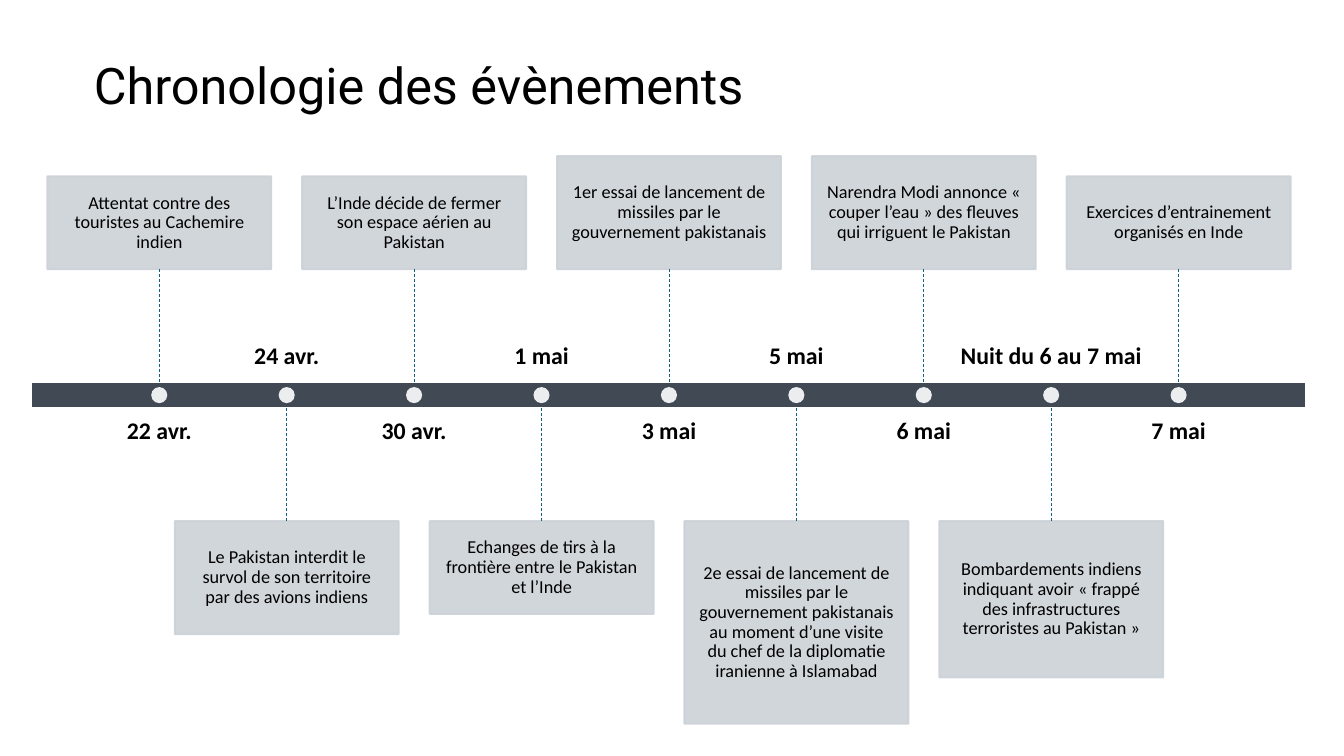
from dataclasses import dataclass

from lxml.etree import SubElement
from pptx import Presentation
from pptx.dml.color import RGBColor
from pptx.enum.dml import MSO_LINE
from pptx.enum.shapes import MSO_CONNECTOR, MSO_SHAPE
from pptx.enum.text import MSO_ANCHOR, MSO_AUTO_SIZE, PP_ALIGN
from pptx.oxml.ns import qn
from pptx.util import Inches, Pt


@dataclass(frozen=True)
class Theme:
    text: RGBColor = RGBColor.from_string("000000")
    white: RGBColor = RGBColor.from_string("FFFFFF")
    bar: RGBColor = RGBColor.from_string("414955")
    box: RGBColor = RGBColor.from_string("CCD2D8")
    link: RGBColor = RGBColor.from_string("156082")
    title_font: str = "Roboto"
    body_font: str = "Calibri"
    title_size: Pt = Pt(36)
    date_size: Pt = Pt(17)
    event_size: Pt = Pt(13)


theme = Theme()


def write(frame, text, font, size, align, anchor, margin, bold=False):
    """Fill a text frame with one formatted paragraph."""
    frame.word_wrap = True
    frame.auto_size = MSO_AUTO_SIZE.NONE
    frame.vertical_anchor = anchor
    frame.margin_left = frame.margin_right = Inches(margin)
    frame.margin_top = frame.margin_bottom = Inches(min(margin, 0.14))
    para = frame.paragraphs[0]
    para.alignment = align
    para.line_spacing = 0.9
    span = para.add_run()
    span.text = text
    span.font.name = font
    span.font.size = size
    span.font.bold = bold
    span.font.color.rgb = theme.text


def add_block(kind, left, top, width, height, color, outline=None, opacity=100):
    """Add a shadowless shape with a plain fill and an optional outline."""
    block = page.shapes.add_shape(
        kind, Inches(left), Inches(top), Inches(width), Inches(height))
    block.shadow.inherit = False
    block.fill.solid()
    block.fill.fore_color.rgb = color
    if outline is None:
        block.line.fill.background()
    else:
        block.line.color.rgb = outline
        block.line.width = Pt(1.5)
    if opacity < 100:
        for tint in block.element.spPr.iter(qn("a:srgbClr")):
            SubElement(tint, qn("a:alpha"), val=str(opacity * 1000))
    return block


# Date, event and box height; events alternate above and below the bar
events = [
    ("22 avr.", "Attentat contre des touristes au Cachemire indien", 0.92),
    ("24 avr.", "Le Pakistan interdit le survol de son territoire par des avions indiens", 1.12),
    ("30 avr.", "L’Inde décide de fermer son espace aérien au Pakistan", 0.92),
    ("1 mai", "Echanges de tirs à la frontière entre le Pakistan et l’Inde", 0.92),
    ("3 mai", "1er essai de lancement de missiles par le gouvernement pakistanais", 1.12),
    ("5 mai", "2e essai de lancement de missiles par le gouvernement pakistanais au moment "
              "d’une visite du chef de la diplomatie iranienne à Islamabad", 2.01),
    ("6 mai", "Narendra Modi annonce « couper l’eau » des fleuves qui irriguent le Pakistan", 1.12),
    ("Nuit du 6 au 7 mai", "Bombardements indiens indiquant avoir « frappé des infrastructures "
                           "terroristes au Pakistan »", 1.55),
    ("7 mai", "Exercices d’entrainement organisés en Inde", 0.92),
]

# Timeline geometry in inches
first_center, last_center = 1.58, 11.69
step = (last_center - first_center) / (len(events) - 1)
bar_top, bar_height = 3.79, 0.26
bar_bottom = bar_top + bar_height
link_length = 1.12
box_width, date_width, date_height, dot_size = 2.22, 2.02, 0.74, 0.16

deck = Presentation()
deck.slide_width = Inches(13.33)
deck.slide_height = Inches(7.5)
page = deck.slides.add_slide(deck.slide_layouts[5])

# Title
title = page.shapes.title
title.left, title.top = Inches(0.83), Inches(0.15)
title.width, title.height = Inches(7.14), Inches(1.45)
write(title.text_frame, "Chronologie des évènements", theme.title_font,
      theme.title_size, PP_ALIGN.LEFT, MSO_ANCHOR.MIDDLE, 0.1)

# Timeline bar
add_block(MSO_SHAPE.RECTANGLE, 0.31, bar_top, 12.64, bar_height, theme.bar, theme.white)

for index, (date, event, box_height) in enumerate(events):
    center = first_center + index * step
    above = index % 2 == 0
    if above:
        box_top = bar_top - link_length - box_height
        date_top, date_anchor = 4.16, MSO_ANCHOR.TOP
        bar_edge, box_side = bar_top, 2
    else:
        box_top = bar_bottom + link_length
        date_top, date_anchor = 2.93, MSO_ANCHOR.BOTTOM
        bar_edge, box_side = bar_bottom, 0

    # Event box
    box = add_block(MSO_SHAPE.RECTANGLE, center - box_width / 2, box_top,
                    box_width, box_height, theme.box, theme.box, 90)
    write(box.text_frame, event, theme.body_font, theme.event_size,
          PP_ALIGN.CENTER, MSO_ANCHOR.MIDDLE, 0.14)

    # Date on the other side of the bar
    label = page.shapes.add_textbox(Inches(center - date_width / 2), Inches(date_top),
                                    Inches(date_width), Inches(date_height))
    write(label.text_frame, date, theme.body_font, theme.date_size,
          PP_ALIGN.CENTER, date_anchor, 0, bold=True)

    # Dashed link from box to bar
    link = page.shapes.add_connector(MSO_CONNECTOR.STRAIGHT, Inches(center), Inches(box_top),
                                     Inches(center), Inches(bar_edge))
    link.begin_connect(box, box_side)
    link.line.color.rgb = theme.link
    link.line.width = Pt(0.5)
    link.line.dash_style = MSO_LINE.DASH
    SubElement(link.element.spPr, qn("a:effectLst"))

    # Dot on the bar
    add_block(MSO_SHAPE.OVAL, center - dot_size / 2, bar_top + (bar_height - dot_size) / 2,
              dot_size, dot_size, theme.white, opacity=90)

deck.save("out.pptx")
